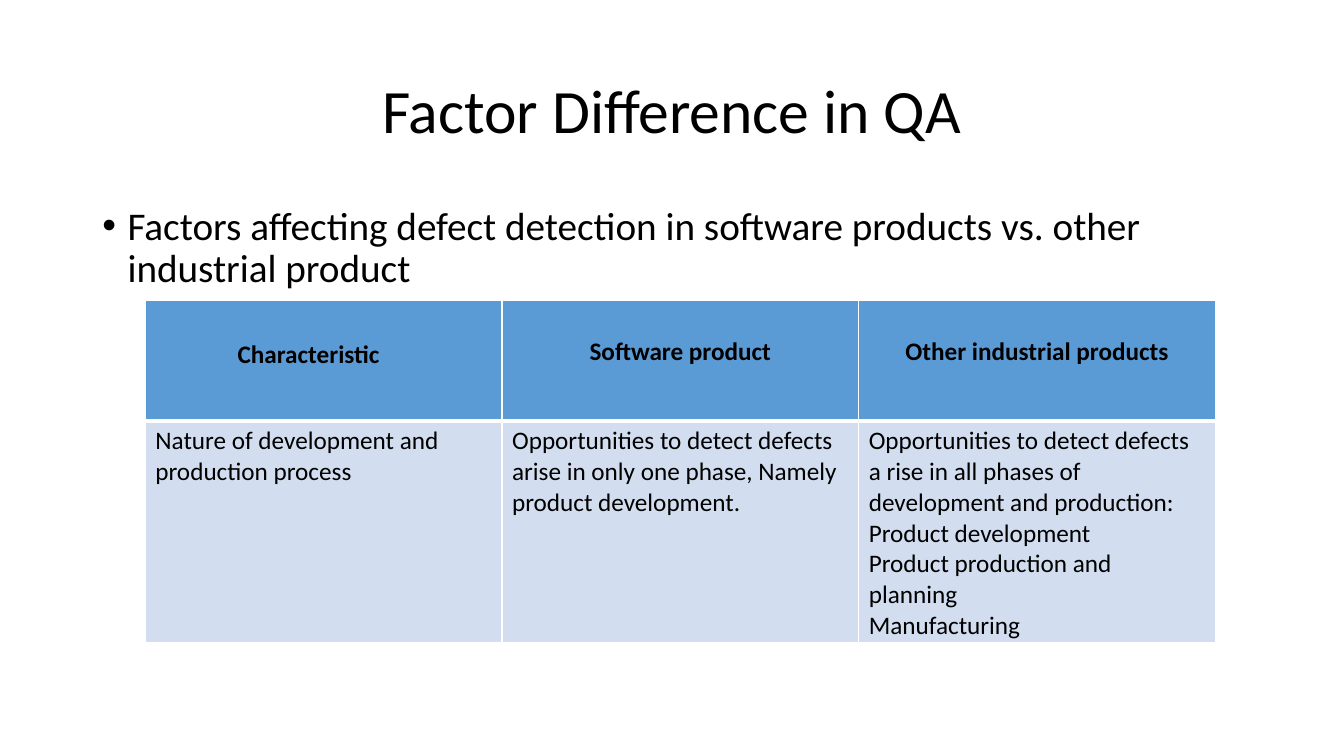
from lxml import etree
from pptx import Presentation, util as u
from pptx.dml import color
from pptx.enum import text
from pptx.oxml import ns

COLUMNS, ROWS = 16, 9


def rgb(value):
    return color.RGBColor.from_string(value)


class SlideBuilder:
    font = "Calibri"
    ink = "000000"
    header_fill = "5B9BD5"
    body_fill = "D2DEEF"
    rule = "FFFFFF"

    def __init__(self, presentation):
        self.column = presentation.slide_width / COLUMNS
        self.row = presentation.slide_height / ROWS
        self.slide = presentation.slides.add_slide(presentation.slide_layouts[6])

    def place(self, left, top, width, height):
        return (round(left * self.column), round(top * self.row),
                round(width * self.column), round(height * self.row))

    def style(self, paragraph, size, bold=False, align=text.PP_ALIGN.LEFT):
        paragraph.alignment = align
        paragraph.font.name = self.font
        paragraph.font.size = u.Pt(size)
        paragraph.font.bold = bold
        paragraph.font.color.rgb = rgb(self.ink)

    def text_box(self, box, words, size, wrap=True, anchor=text.MSO_ANCHOR.TOP, **style):
        shape = self.slide.shapes.add_textbox(*self.place(*box))
        frame = shape.text_frame
        frame.word_wrap = wrap
        frame.vertical_anchor = anchor
        frame.text = words
        paragraph = frame.paragraphs[0]
        self.style(paragraph, size, **style)
        return paragraph

    def title(self, box, words):
        paragraph = self.text_box(box, words, 44, anchor=text.MSO_ANCHOR.MIDDLE,
                                  align=text.PP_ALIGN.CENTER)
        paragraph.line_spacing = 0.9

    def bullet(self, box, words):
        paragraph = self.text_box(box, words, 28)
        paragraph.line_spacing = 0.9
        paragraph.space_before = u.Pt(10)
        properties = paragraph._p.get_or_add_pPr()
        properties.set("marL", str(u.Inches(0.25)))
        properties.set("indent", str(-u.Inches(0.25)))
        bullet_font = etree.Element(ns.qn("a:buFont"), typeface="Arial")
        bullet_mark = etree.Element(ns.qn("a:buChar"), char="•")
        properties.find(ns.qn("a:spcBef")).addnext(bullet_font)
        bullet_font.addnext(bullet_mark)

    def borders(self, cell, **widths):
        properties = cell._tc.get_or_add_tcPr()
        for side in "LRTB":
            line = etree.SubElement(properties, ns.qn(f"a:ln{side}"),
                                    w=str(u.Pt(widths.get(side, 1))))
            fill = etree.SubElement(line, ns.qn("a:solidFill"))
            etree.SubElement(fill, ns.qn("a:srgbClr"), val=self.rule)

    def cell(self, cell, words, header):
        self.borders(cell, **({"B": 3} if header else {"T": 3}))
        cell.fill.solid()
        cell.fill.fore_color.rgb = rgb(self.header_fill if header else self.body_fill)
        if header:
            cell.margin_top = u.Inches(0.35)
        cell.text = words
        align = text.PP_ALIGN.CENTER if header else text.PP_ALIGN.LEFT
        for paragraph in cell.text_frame.paragraphs:
            self.style(paragraph, 18, bold=header, align=align)

    def table(self, left, top, width, heights, rows):
        frame = self.slide.shapes.add_table(
            len(rows), len(rows[0]), *self.place(left, top, width, sum(heights)))
        table = frame.table
        table.first_row = table.horz_banding = False
        for index, (height, row) in enumerate(zip(heights, rows)):
            table.rows[index].height = round(height * self.row)
            for cell, words in zip(table.rows[index].cells, row):
                self.cell(cell, words, header=index == 0)


def main():
    presentation = Presentation()
    presentation.slide_width = u.Inches(13.33)
    presentation.slide_height = u.Inches(7.5)

    builder = SlideBuilder(presentation)
    builder.title((1.1, 0.48, 13.8, 1.74), "Factor Difference in QA")
    builder.bullet((1.1, 2.4, 13.8, 5.71),
                   "Factors affecting defect detection in software products vs. "
                   "other industrial product")
    builder.table(1.73, 3.58, 12.74, (1.43, 2.64), [
        ("", "Software product", "Other industrial products"),
        ("Nature of development and production process",
         "Opportunities to detect defects arise in only one phase, "
         "Namely product development.",
         "Opportunities to detect defects a rise in all phases of "
         "development and production:\nProduct development\n"
         "Product production and planning\nManufacturing"),
    ])
    builder.text_box((2.71, 3.97, 1.94, 0.48), "Characteristic", 18,
                     wrap=False, bold=True)
    presentation.save("out.pptx")


if __name__ == "__main__":
    main()
